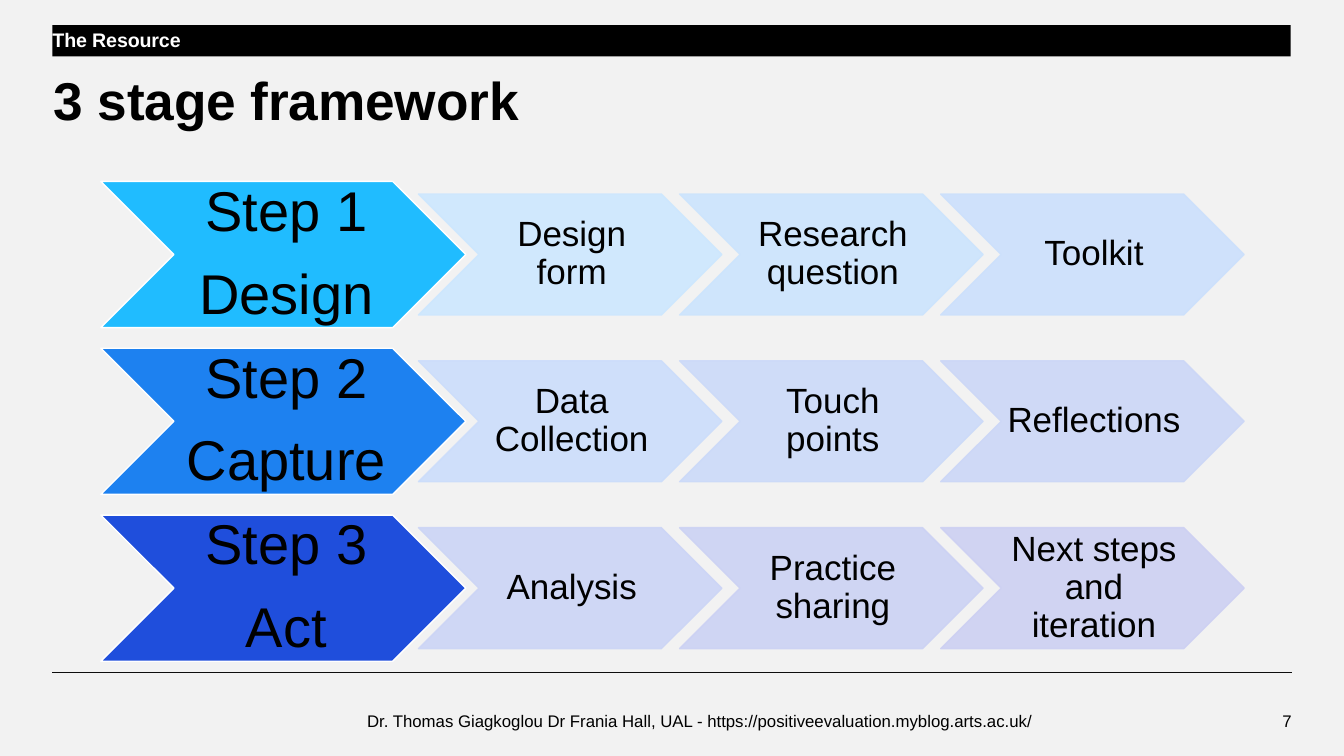
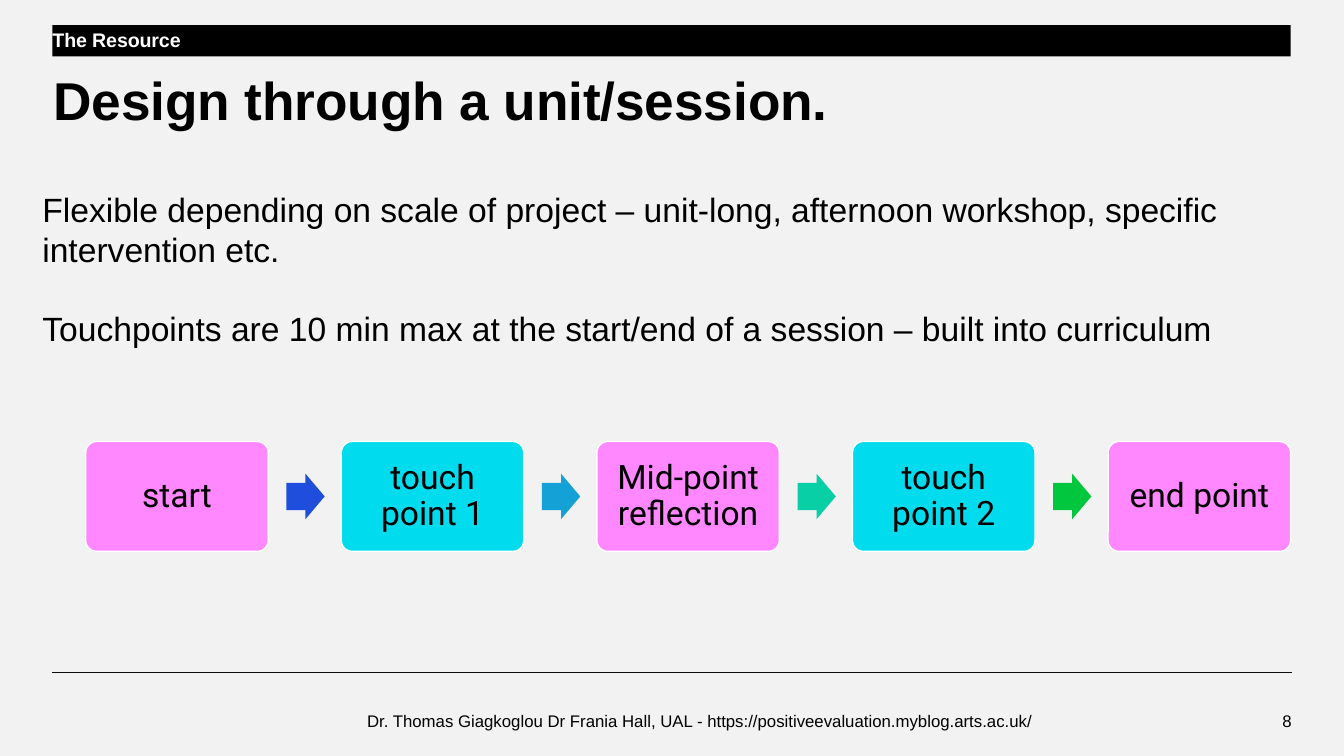
from pptx import Presentation
from pptx.dml.color import RGBColor as RGB
from pptx.enum.shapes import MSO_CONNECTOR as Link, MSO_SHAPE as Kind
from pptx.enum.text import MSO_ANCHOR as Anchor, PP_ALIGN as Align
from pptx.oxml.ns import qn
from pptx.util import Inches, Pt
from lxml import etree

INK = {
    "page": "F2F2F2", "black": "000000", "white": "FFFFFF", "rule": "0D0D0D",
    "pink": "FF87FF", "cyan": "00DCED",
}
FOOT = "Dr. Thomas Giagkoglou Dr Frania Hall, UAL - https://positiveevaluation.myblog.arts.ac.uk/"
TITLES = ["3 stage framework", "Design through a unit/session."]


def write(shape, text, size=12, font="Arial", color="black", bold=False, align=Align.LEFT,
          anchor=Anchor.MIDDLE, pad=(0, 0, 0, 0), lead=1.0, after=0, track=0):
    frame = shape.text_frame
    frame.word_wrap = True
    frame.vertical_anchor = anchor
    frame.margin_left, frame.margin_top, frame.margin_right, frame.margin_bottom = map(Inches, pad)
    for i, line in enumerate(text.split("\n")):
        para = frame.paragraphs[0] if i == 0 else frame.add_paragraph()
        para.alignment = align
        para.line_spacing = lead
        para.space_after = Pt(after)
        run = para.add_run()
        run.text = line
        run.font.size = Pt(size)
        run.font.name = font
        run.font.bold = bold
        run.font.color.rgb = RGB.from_string(INK[color])
        if track:
            run.font._element.set("spc", str(track))


def draw(slide, kind, box, fill, line=None, alpha=None):
    shape = slide.shapes.add_shape(kind, *map(Inches, box))
    shape.shadow.inherit = False
    shape.fill.solid()
    shape.fill.fore_color.rgb = RGB.from_string(fill)
    if line:
        shape.line.color.rgb = RGB.from_string(line)
        shape.line.width = Pt(1)
    else:
        shape.line.fill.background()
    if alpha:
        for tint in shape._element.spPr.iter(qn("a:srgbClr")):
            etree.SubElement(tint, qn("a:alpha")).set("val", str(alpha * 1000))
    return shape


deck = Presentation()
deck.slide_width, deck.slide_height = Inches(13.33), Inches(7.5)

for page, title in enumerate(TITLES, 7):
    slide = deck.slides.add_slide(deck.slide_layouts[6])
    slide.background.fill.solid()
    slide.background.fill.fore_color.rgb = RGB.from_string(INK["page"])
    rule = slide.shapes.add_connector(
        Link.STRAIGHT, Inches(0.52), Inches(6.67), Inches(12.81), Inches(6.67))
    rule.line.color.rgb = RGB.from_string(INK["rule"])
    rule.line.width = Pt(0.25)
    etree.SubElement(rule._element.spPr, qn("a:effectLst"))
    band = draw(slide, Kind.RECTANGLE, (0.52, 0.25, 12.28, 0.31), INK["black"])
    write(band, "The Resource", size=14, color="white", bold=True, anchor=Anchor.TOP,
          lead=1.1, track=-10)
    for box, text, form in [
        ((0.53, 0.52, 12.28, 0.79), title,
         dict(size=38, bold=True, anchor=Anchor.BOTTOM, lead=0.9, track=-10)),
        ((3.64, 6.95, 8.72, 0.4), FOOT, {}),
        ((12.36, 6.95, 0.45, 0.4), str(page), dict(align=Align.RIGHT)),
    ]:
        write(slide.shapes.add_textbox(*map(Inches, box)), text, **form)

stage, flow = deck.slides

STEPS = [
    ("Step 1\nDesign", "20BCFF",
     [("Design form", "CDE7FF"), ("Research question", "CCE4FE"), ("Toolkit", "CCE0FC")]),
    ("Step 2\nCapture", "1D81F0",
     [("Data Collection", "CCDDFB"), ("Touch points", "CCDAF9"), ("Reflections", "CCD7F7")]),
    ("Step 3\nAct", "1F4EDC",
     [("Analysis", "CCD5F6"), ("Practice sharing", "CCD2F4"),
      ("Next steps and iteration", "CDD0F2")]),
]
tall, first, last = 1.45, 1.8, 5.11
for row, (step, fill, parts) in enumerate(STEPS):
    top = first + row * (last - first) / (len(STEPS) - 1)
    head = draw(stage, Kind.CHEVRON, (1, top, 3.62, tall), fill, INK["white"])
    write(head, step, size=40, align=Align.CENTER, pad=(0.06, 0.03, 0, 0.03), lead=0.9, after=16)
    for col, (part, tint) in enumerate(parts):
        box = (4.15 + col * 2.59, top + (tall - 1.2) / 2, 3.01, 1.2)
        item = draw(stage, Kind.CHEVRON, box, tint, tint, alpha=90)
        write(item, part, size=25, align=Align.CENTER, pad=(0.03, 0.02, 0, 0.02),
              lead=0.9, after=10)

body = flow.shapes.add_textbox(Inches(0.42), Inches(1.87), Inches(12.58), Inches(1.88))
write(body, "Flexible depending on scale of project – unit-long, afternoon workshop, "
      "specific intervention etc.\n"
      "Touchpoints are 10 min max at the start/end of a session – built into curriculum",
      size=24, anchor=Anchor.TOP, after=28)

POINTS = ["start", "touch point 1", "Mid-point reflection", "touch point 2", "end point"]
ARROWS = ["1F4EDC", "13A1D6", "09CFA6", "00C73E"]
left, wide, end = 0.85, 1.81, 12.8
pitch = (end - wide - left) / (len(POINTS) - 1)
for i, point in enumerate(POINTS):
    x = left + i * pitch
    card = draw(flow, Kind.ROUNDED_RECTANGLE, (x, 4.38, wide, 1.09),
                INK["cyan" if i % 2 else "pink"], INK["white"])
    card.adjustments[0] = 0.1
    write(card, point, size=24, font="Roboto", align=Align.CENTER, pad=(0.1,) * 4,
          lead=0.9, after=10)
    if i < len(ARROWS):
        arrow = draw(flow, Kind.RIGHT_ARROW, (x + wide + 0.18, 4.7, 0.38, 0.45), ARROWS[i])
        arrow.adjustments[0] = 0.6
        arrow.adjustments[1] = 0.5

deck.save("out.pptx")
